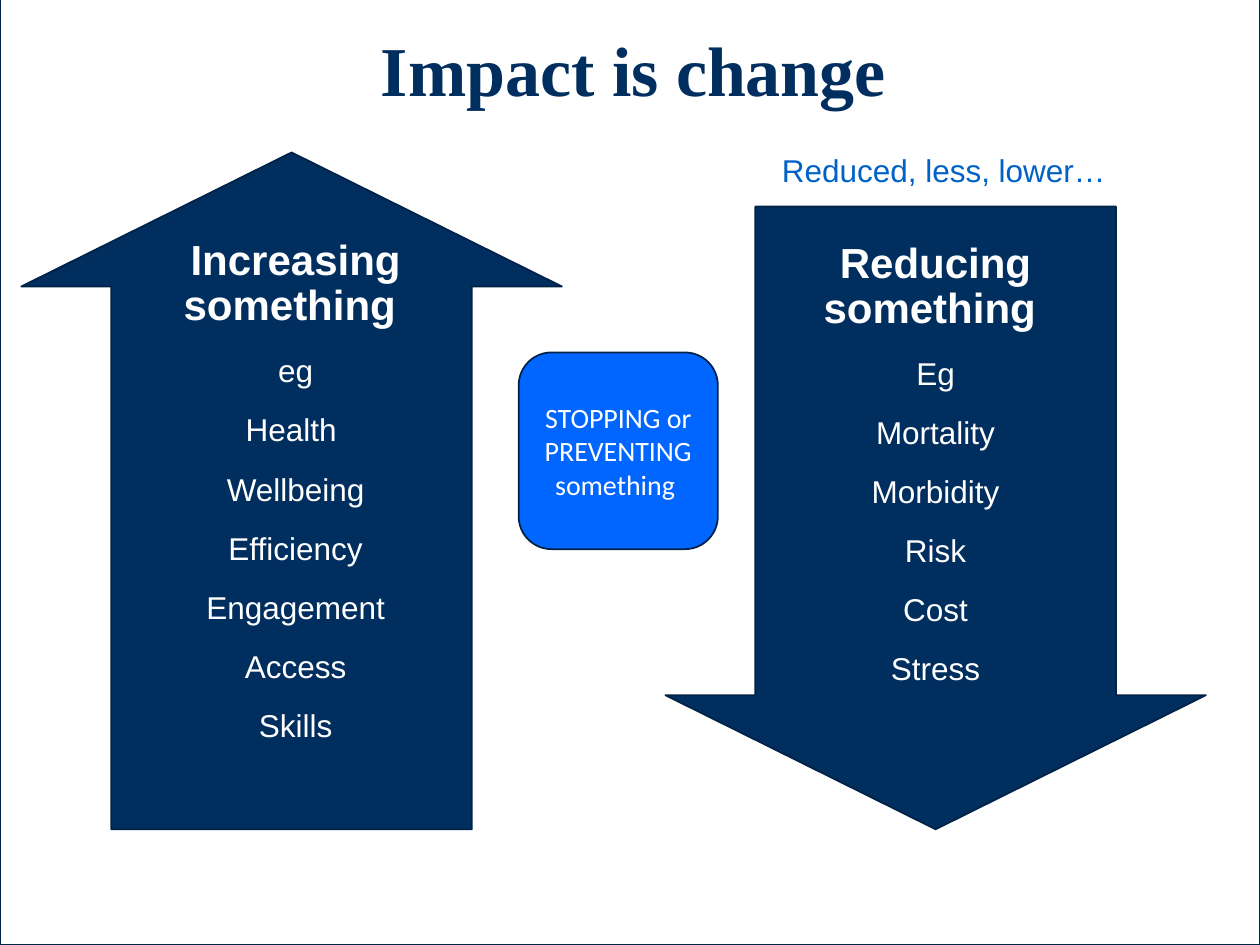
from pptx import Presentation
from pptx.dml.color import RGBColor
from pptx.enum.shapes import MSO_SHAPE as SHAPE
from pptx.enum.text import MSO_ANCHOR as ANCHOR, PP_ALIGN as ALIGN
from pptx.util import Pt

NAVY, EDGE, BLUE, SKY, WHITE = "002E5E", "002246", "0066FF", "0061C6", "FFFFFF"


def rgb(color):
    return RGBColor.from_string(color)


def add_box(slide, kind, box, fill):
    sp = slide.shapes.add_shape(kind, *map(Pt, box))
    sp.shadow.inherit = False
    sp.fill.solid()
    sp.fill.fore_color.rgb = rgb(fill)
    sp.line.color.rgb = rgb(EDGE)
    sp.line.width = Pt(1)
    return sp


def add_text_frame(slide, box):
    tf = slide.shapes.add_textbox(*map(Pt, box)).text_frame
    tf.word_wrap = True
    return tf


def write(p, text, size, color, font="Arial", bold=False, spacing=0.9):
    p.alignment = ALIGN.CENTER
    p.line_spacing = spacing
    r = p.add_run()
    r.text = text
    r.font.size = Pt(size)
    r.font.name = font
    r.font.bold = bold
    r.font.color.rgb = rgb(color)


def add_title(slide, box, text):
    tf = add_text_frame(slide, box)
    write(tf.paragraphs[0], text, 40, NAVY, "Times New Roman", bold=True)


def add_caption(slide, box, text):
    write(add_text_frame(slide, box).paragraphs[0], text, 18, SKY)


def add_arrow(slide, kind, box, text_box, heading, items):
    """Block arrow with a heading and a list of examples over its shaft."""
    arrow = add_box(slide, kind, box, NAVY)
    arrow.adjustments[0] = 0.667
    arrow.adjustments[1] = 0.248
    tf = add_text_frame(slide, text_box)
    write(tf.paragraphs[0], heading, 24, WHITE, bold=True)
    for item in items:
        p = tf.add_paragraph()
        p.space_before = Pt(1.4)
        write(p, item, 18, WHITE, spacing=1.5)


def add_callout(slide, box, text):
    sp = add_box(slide, SHAPE.FLOWCHART_ALTERNATE_PROCESS, box, BLUE)
    tf = sp.text_frame
    tf.word_wrap = True
    tf.vertical_anchor = ANCHOR.MIDDLE
    write(tf.paragraphs[0], text, 16, WHITE, "Calibri", spacing=1.0)


def main():
    prs = Presentation()
    prs.slide_width, prs.slide_height = Pt(720), Pt(540)
    slide = prs.slides.add_slide(prs.slide_layouts[6])

    add_box(slide, SHAPE.RECTANGLE, (0, -2, 720, 542), WHITE)
    add_title(slide, (56, 17.3, 612, 73.4), "Impact is change")
    add_arrow(slide, SHAPE.UP_ARROW, (12.2, 87.1, 308.9, 386.8),
              (69.6, 133.2, 198.7, 318.2), "Increasing something ",
              ["eg", "Health ", "Wellbeing", "Efficiency",
               "Engagement", "Access", "Skills"])
    add_caption(slide, (419.8, 85, 244, 61.2), "Reduced, less, lower… ")
    add_arrow(slide, SHAPE.DOWN_ARROW, (380.2, 118.1, 308.9, 355.8),
              (446.4, 134.6, 176.4, 339.8), "Reducing something ",
              ["Eg", "Mortality", "Morbidity", "Risk", "Cost", "Stress"])
    add_callout(slide, (296.4, 201.4, 113.8, 112.4),
                "STOPPING or PREVENTING something ")
    prs.save("out.pptx")


if __name__ == "__main__":
    main()
